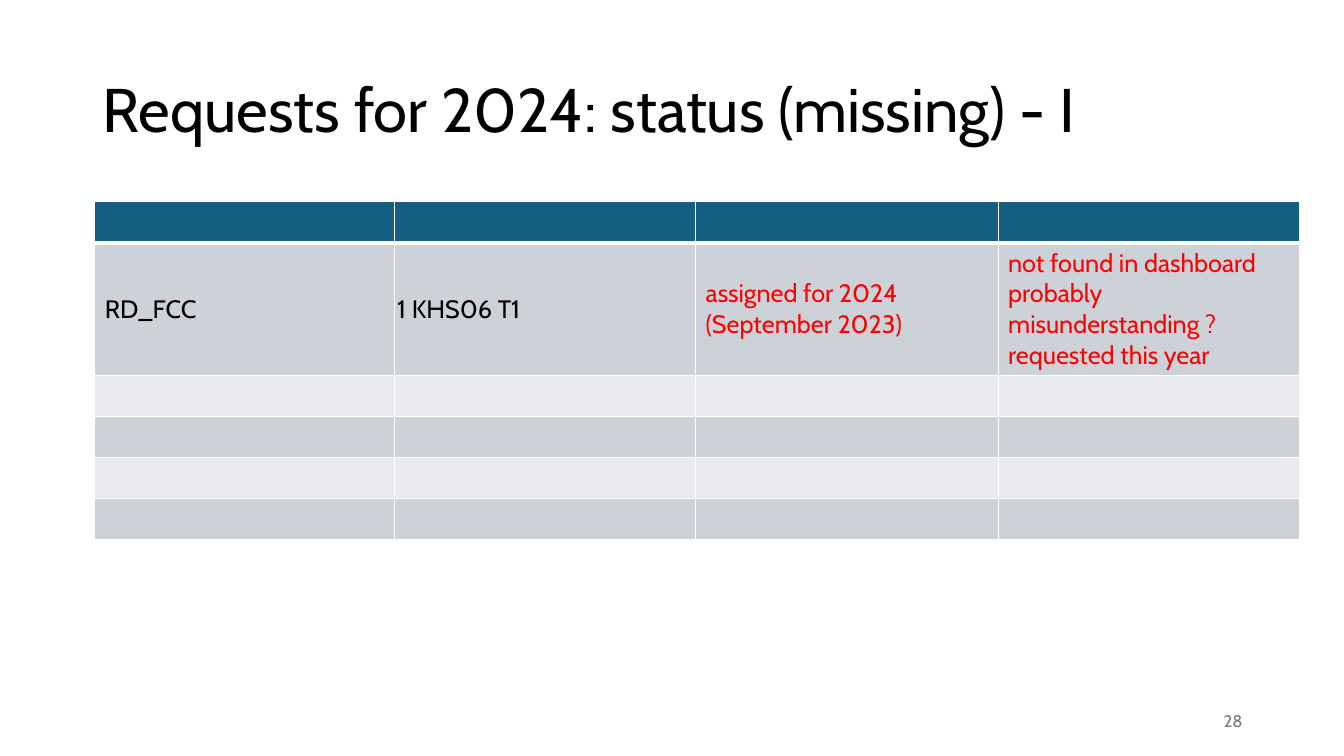
from dataclasses import dataclass

from lxml import etree
from pptx import Presentation
from pptx.dml.color import RGBColor
from pptx.enum.text import MSO_ANCHOR, PP_ALIGN
from pptx.oxml.ns import qn
from pptx.util import Inches, Pt

MIDDLE = MSO_ANCHOR.MIDDLE
LEFT, RIGHT = PP_ALIGN.LEFT, PP_ALIGN.RIGHT
FONT = "Cabin"
BLACK, WHITE, RED, GREY = "000000", "FFFFFF", "FF0000", "797979"
HEADER, DARK_BAND, LIGHT_BAND = "156082", "CCD2D8", "E8EAED"
SLIDE_W, SLIDE_H = Inches(13.33), Inches(7.5)
COLUMNS = (2.97, 2.99, 3, 2.99)
ROWS = (0.4, 1.31, 0.4, 0.4, 0.4, 0.4)
REQUEST_ROW = 1


@dataclass
class Entry:
    lines: tuple[str, ...]
    color: str = BLACK
    tight: bool = False


REQUEST = (
    Entry(("RD_FCC",)),
    Entry(("1 KHS06 T1",), tight=True),
    Entry(("assigned for 2024", "(September 2023)"), RED),
    Entry(("not found in dashboard", "probably misunderstanding ?",
           "requested this year"), RED),
)


def rgb(value: str) -> RGBColor:
    return RGBColor.from_string(value)


def area(left: float, top: float, width: float, height: float) -> tuple[int, ...]:
    """Turn shares of the slide's size into lengths."""
    return (round(left * SLIDE_W), round(top * SLIDE_H),
            round(width * SLIDE_W), round(height * SLIDE_H))


def write(tf, lines: tuple[str, ...], size: int, color: str, align=LEFT) -> None:
    for i, line in enumerate(lines):
        p = tf.add_paragraph() if i else tf.paragraphs[0]
        p.alignment = align
        r = p.add_run()
        r.text = line
        for name, value in {"name": FONT, "size": Pt(size), "bold": False}.items():
            setattr(r.font, name, value)
        r.font.color.rgb = rgb(color)


def add_borders(cell, widths: dict[str, int]) -> None:
    tc_pr = cell._tc.get_or_add_tcPr()
    for side, width in widths.items():
        ln = etree.SubElement(tc_pr, qn(f"a:ln{side}"), w=str(Pt(width)))
        fill = etree.SubElement(ln, qn("a:solidFill"))
        etree.SubElement(fill, qn("a:srgbClr"), val=WHITE)


def band(row: int) -> str:
    if row == 0:
        return HEADER
    return DARK_BAND if row % 2 else LIGHT_BAND


def add_title(s, text: str) -> None:
    title = s.shapes.title
    title.left, title.top, title.width, title.height = area(0.069, 0.053, 0.863, 0.193)
    tf = title.text_frame
    tf.word_wrap = True
    tf.vertical_anchor = MIDDLE
    write(tf, (text,), 44, BLACK)
    tf.paragraphs[0].line_spacing = 0.9


def add_requests(s) -> None:
    place = area(0.0705, 0.267, 0.896, 0.444)
    table = s.shapes.add_table(len(ROWS), len(COLUMNS), *place).table
    for column, width in zip(table.columns, COLUMNS):
        column.width = Inches(width)
    for i, (row, height) in enumerate(zip(table.rows, ROWS)):
        row.height = Inches(height)
        for cell in row.cells:
            add_borders(cell, {"L": 1, "R": 1, "T": 3 if i == 1 else 1,
                               "B": 3 if i == 0 else 1})
            cell.fill.solid()
            cell.fill.fore_color.rgb = rgb(band(i))
    for cell, entry in zip(table.rows[REQUEST_ROW].cells, REQUEST):
        cell.vertical_anchor = MIDDLE
        if entry.tight:
            cell.margin_left = cell.margin_right = Inches(0.03)
            cell.margin_top = cell.margin_bottom = Inches(0.02)
        write(cell.text_frame, entry.lines, 18, entry.color)


def add_page_number(s, number: str) -> None:
    tf = s.shapes.add_textbox(*area(0.707, 0.927, 0.225, 0.053)).text_frame
    tf.word_wrap = True
    tf.vertical_anchor = MIDDLE
    write(tf, (number,), 12, GREY, RIGHT)


def main() -> None:
    prs = Presentation()
    prs.slide_width, prs.slide_height = SLIDE_W, SLIDE_H
    s = prs.slides.add_slide(prs.slide_layouts[5])
    add_title(s, "Requests for 2024: status (missing) - I")
    add_requests(s)
    add_page_number(s, "28")
    prs.save("out.pptx")


if __name__ == "__main__":
    main()
